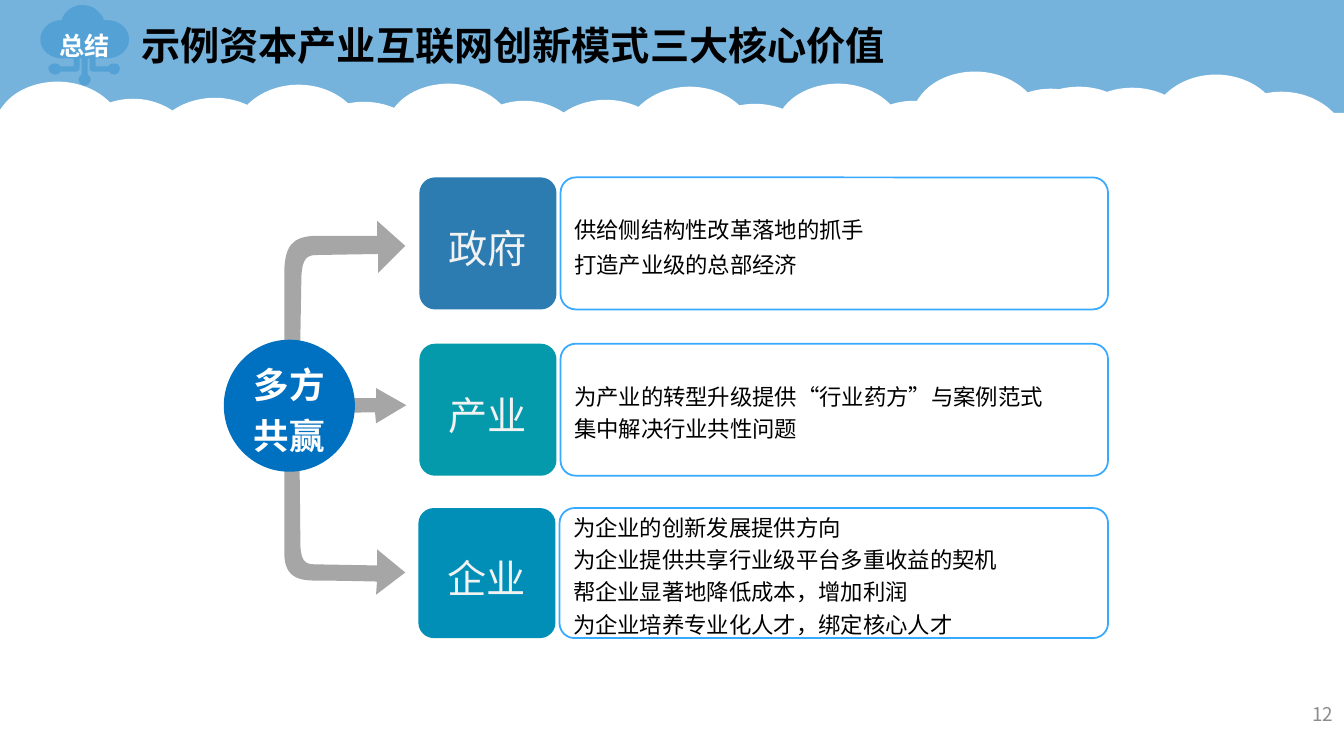
"""Build the summary slide on the three core values of the innovation model."""
import lxml.etree
import pptx
import pptx.dml.color
import pptx.enum.shapes
import pptx.enum.text
import pptx.oxml.ns
import pptx.util

PX = 9144
FONT = "Noto Sans CJK SC"
SHAPE = pptx.enum.shapes.MSO_SHAPE
ALIGN = pptx.enum.text.PP_ALIGN


def paint(shape, fill=None, line=None):
    shape.shadow.inherit = False
    for target, color in ((shape.fill, fill), (shape.line.fill, line)):
        if color:
            target.solid()
            target.fore_color.rgb = pptx.dml.color.RGBColor.from_string(color)
        else:
            target.background()
    return shape


def write(box, text, size=16, color="000000", bold=False, align=ALIGN.LEFT,
          spacing=1.0, inset=(9, 5)):
    frame = box.text_frame
    frame.word_wrap = True
    frame.auto_size = pptx.enum.text.MSO_AUTO_SIZE.NONE
    frame.vertical_anchor = pptx.enum.text.MSO_ANCHOR.MIDDLE
    frame.margin_left = frame.margin_right = inset[0] * PX
    frame.margin_top = frame.margin_bottom = inset[1] * PX
    for number, sentence in enumerate(text.split("\n")):
        para = frame.add_paragraph() if number else frame.paragraphs[0]
        para.alignment = align
        para.line_spacing = spacing
        para.space_before = para.space_after = pptx.util.Pt(0)
        span = para.add_run()
        span.text = sentence
        span.font.size = pptx.util.Pt(size)
        span.font.bold = bold
        span.font.name = FONT
        span.font.color.rgb = pptx.dml.color.RGBColor.from_string(color)
        properties = span.font._element
        properties.set("lang", "zh-CN")
        lxml.etree.SubElement(properties, pptx.oxml.ns.qn("a:ea"), typeface=FONT)


deck = pptx.Presentation()
deck.slide_width, deck.slide_height = 1333 * PX, 750 * PX
page = deck.slides.add_slide(deck.slide_layouts[5])
shapes = page.shapes

sky = paint(shapes.add_shape(SHAPE.RECTANGLE, 0, 0, 1333 * PX, 368 * PX), "53A1D5")
sky_color = sky.element.spPr.find(".//" + pptx.oxml.ns.qn("a:srgbClr"))
lxml.etree.SubElement(sky_color, pptx.oxml.ns.qn("a:alpha"), val="80000")

first_puff = [
    (0, 0), (37, 0, 67, 25, 67, 55), (67, 86, 37, 111, 0, 111),
    (-22, 111, -43, 101, -54, 86), (-57, 82), (-57, 28), (-54, 24), (-43, 9, -22, 0, 0, 0)]
last_puff = [
    (304, 20), (331, 20, 355, 34, 365, 54), (366, 57), (366, 94), (365, 97),
    (355, 117, 331, 131, 304, 131), (267, 131, 238, 106, 238, 76),
    (238, 45, 267, 20, 304, 20)]
arrow_down = [
    (297, 443), (298, 542), (299, 560, 305, 560, 316, 560), (374, 561), (374, 545),
    (402, 568), (373, 590), (374, 577), (374, 577, 334, 576, 312, 576),
    (290, 576, 282, 568, 282, 548), (282, 441), (285, 423, 294, 425, 297, 443)]
arrow_right = [(262, 411), (372, 409), (373, 420), (403, 402), (373, 385), (373, 395), (261, 395)]
arrow_up = [
    (297, 389), (299, 274), (300, 254, 306, 253, 316, 253), (375, 252), (375, 271),
    (402, 244), (374, 219), (374, 234), (374, 234, 334, 234, 312, 234),
    (290, 235, 283, 244, 282, 268), (282, 392), (285, 412, 294, 410, 297, 389)]
cloud_badge = [
    (106, 58), (118, 58, 128, 50, 128, 39), (128, 28, 118, 20, 106, 20),
    (105, 20, 104, 20, 103, 20), (102, 16, 100, 13, 97, 11), (93, 7, 88, 5, 82, 5),
    (72, 5, 64, 11, 61, 20), (49, 20, 40, 29, 40, 39), (40, 50, 50, 58, 62, 58),
    (73, 58), (73, 66), (60, 66), (59, 64, 57, 63, 55, 63), (51, 63, 48, 65, 48, 68),
    (48, 71, 51, 74, 55, 74), (57, 74, 59, 73, 60, 71), (76, 71),
    (77, 71, 79, 70, 79, 68), (79, 58), (81, 58), (81, 74), (79, 75, 78, 77, 78, 79),
    (78, 82, 80, 85, 84, 85), (87, 85, 90, 82, 90, 79), (90, 77, 89, 75, 87, 74),
    (87, 58), (89, 58), (89, 69), (89, 70, 90, 71, 92, 71), (108, 71),
    (109, 73, 111, 74, 113, 74), (117, 74, 119, 71, 119, 68),
    (119, 65, 117, 63, 113, 63), (111, 63, 108, 64, 107, 66), (95, 66), (95, 58)]

outlines = []
for bank_x, bank_y in [(57, 81), (445, 83), (831, 83), (967, 71)]:
    outlines.append((first_puff, "FFFFFF", bank_x, bank_y))
    for shift, drop, height in [(75, 17, 121), (156, 16, 111), (239, 3, 111)]:
        paint(shapes.add_shape(SHAPE.OVAL, (bank_x + shift - 66) * PX, (bank_y + drop) * PX,
                               132 * PX, height * PX), "FFFFFF")
    outlines.append((last_puff, "FFFFFF", bank_x, bank_y))
paint(shapes.add_shape(SHAPE.RECTANGLE, 0, 112 * PX, 1333 * PX, 450 * PX), "FFFFFF")
for arrow in (arrow_down, arrow_right, arrow_up):
    outlines.append((arrow, "A6A6A6", 0, 0))
outlines.append((cloud_badge, "53A1D5", 0, 0))

for outline, color, left, top in outlines:
    points = [((left + x) * PX, (top + y) * PX) for segment in outline
              for x, y in zip(segment[::2], segment[1::2])]
    builder = shapes.build_freeform(*points[0])
    builder.add_line_segments(points[1:], close=True)
    drawn = paint(builder.convert_to_shape(), color)
    lines = iter(drawn.element.findall(".//" + pptx.oxml.ns.qn("a:lnTo")))
    for segment in outline[1:]:
        line = next(lines)
        if len(segment) == 6:
            line.tag = pptx.oxml.ns.qn("a:cubicBezTo")
            for extra in (next(lines), next(lines)):
                line.append(extra[0])
                extra.getparent().remove(extra)
write(drawn, "总结", size=18, color="FFFFFF", bold=True, align=ALIGN.CENTER, inset=(10, 5))

title = shapes.title
title.left, title.top, title.width, title.height = (v * PX for v in (130, 16, 814, 57))
title.element.getparent().append(title.element)
write(title, "示例资本产业互联网创新模式三大核心价值", size=28, bold=True, inset=(10, 0))

page_number = shapes.add_textbox(1285 * PX, 693 * PX, 47 * PX, 30 * PX)
write(page_number, "12", size=13.5, color="8C8C8C", align=ALIGN.RIGHT, inset=(10, 5))

cards = [
    ("政府", "2C7CB2", 416, 176, 131, 1.3, "供给侧结构性改革落地的抓手\n打造产业级的总部经济"),
    ("产业", "049AAB", 416, 341, 131, 1.2,
     "为产业的转型升级提供“行业药方”与案例范式\n集中解决行业共性问题"),
    ("企业", "018FB8", 415, 504, 129, 1.2,
     "为企业的创新发展提供方向\n为企业提供共享行业级平台多重收益的契机\n"
     "帮企业显著地降低成本，增加利润\n为企业培养专业化人才，绑定核心人才"),
]
for name, color, left, top, height, spacing, values in cards:
    panel = shapes.add_shape(SHAPE.ROUNDED_RECTANGLE, (left + 140) * PX, top * PX,
                             (959 - left) * PX, height * PX)
    panel.adjustments[0] = 0.115
    paint(panel, line="37A9FF").line.width = pptx.util.Pt(1.25)
    write(panel, values, spacing=spacing)
    label = shapes.add_shape(SHAPE.ROUNDED_RECTANGLE, left * PX, top * PX, 136 * PX, height * PX)
    label.adjustments[0] = 0.119
    paint(label, color)
    write(label, name, size=28, color="F2F2F2", align=ALIGN.CENTER, spacing=1.2)

hub = paint(shapes.add_shape(SHAPE.OVAL, 222 * PX, 337 * PX, 130 * PX, 131 * PX), "0070C0")
write(hub, "多方共赢", size=25.4, color="FFFFFF", bold=True, align=ALIGN.CENTER, spacing=1.2)

deck.save("out.pptx")
